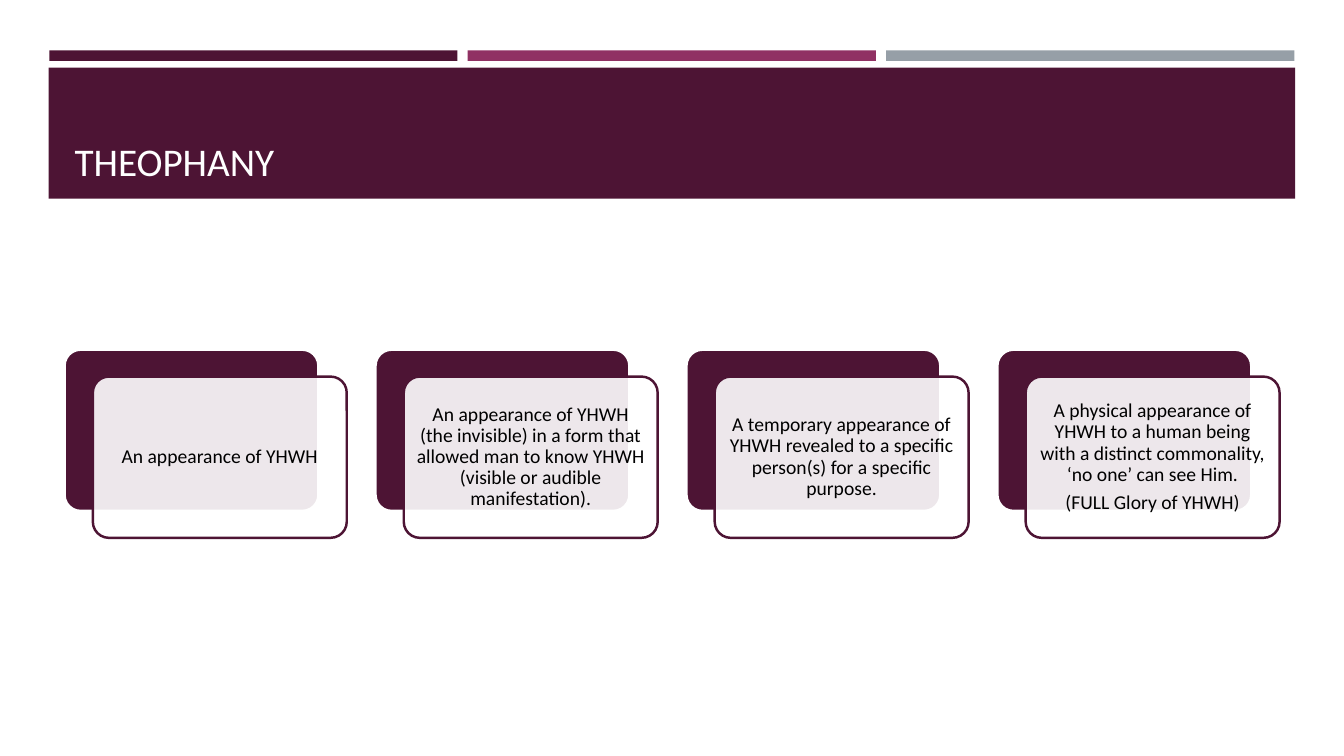
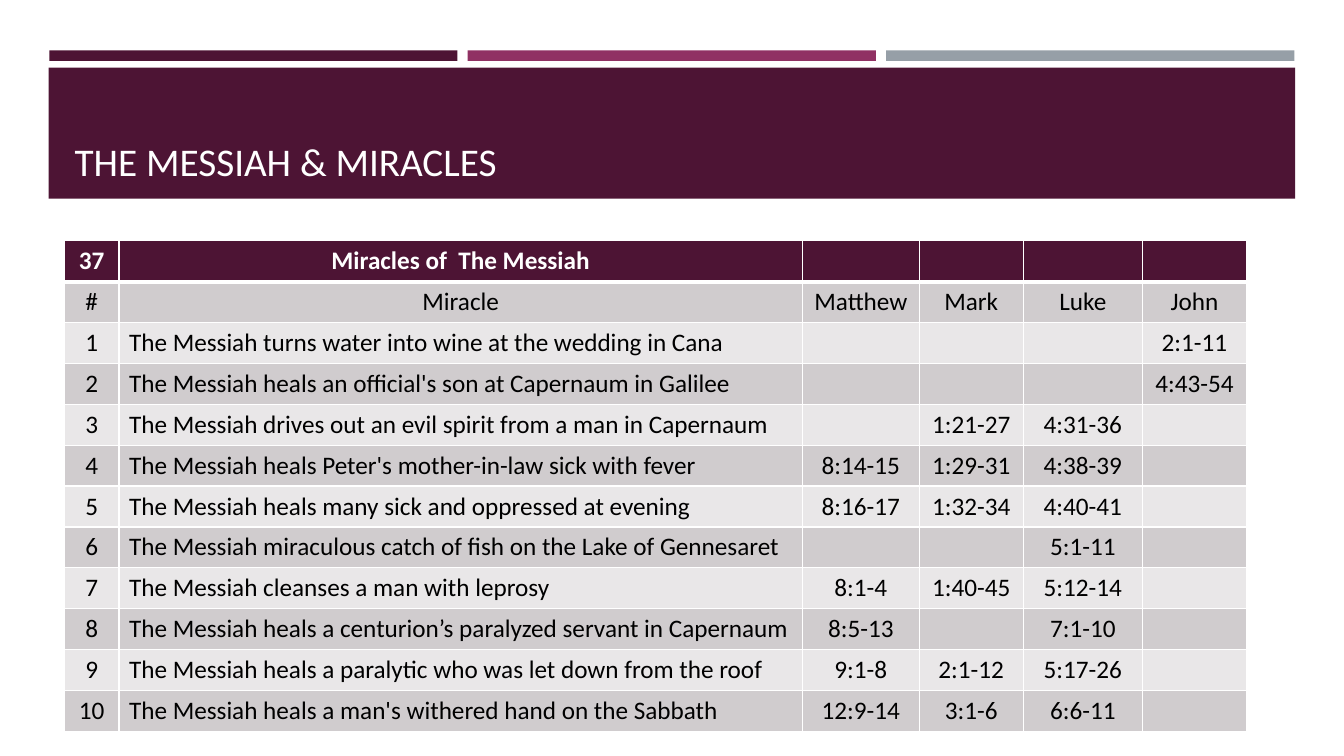
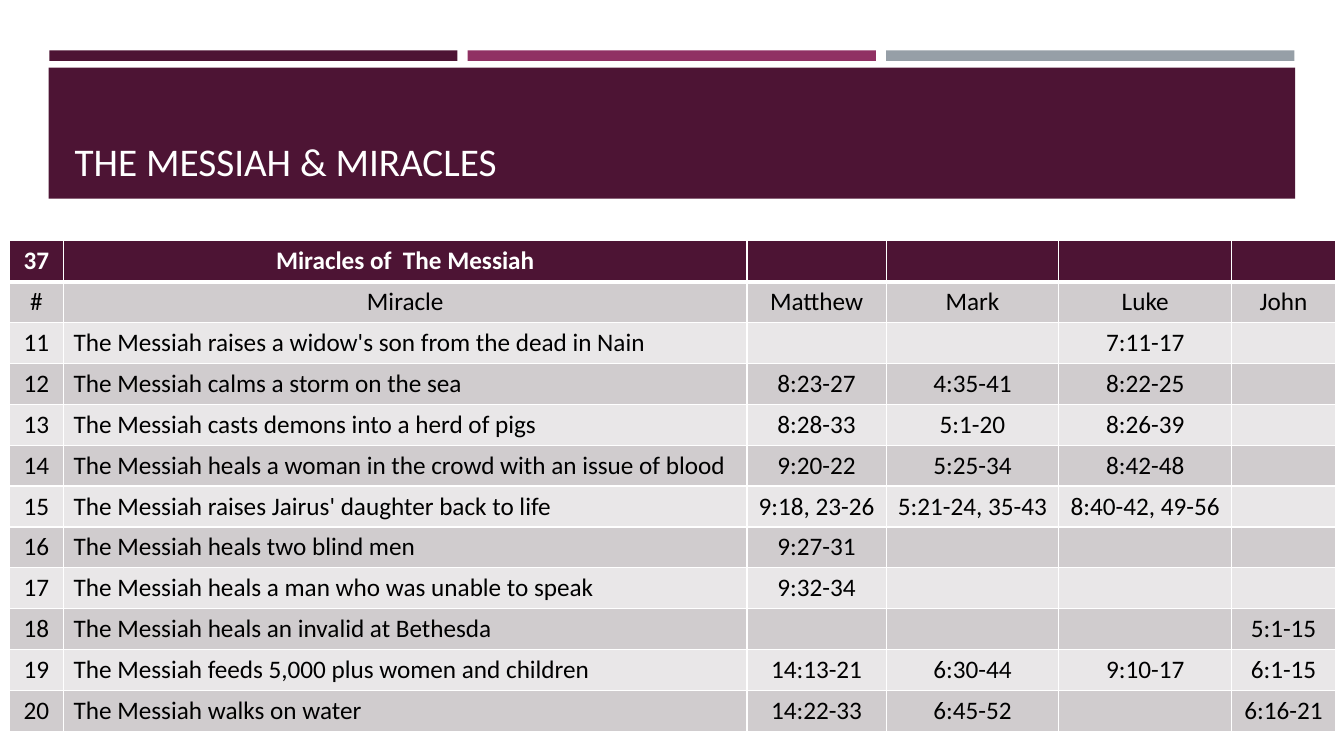
from lxml import etree
from pptx import Presentation
from pptx.dml.color import RGBColor
from pptx.enum.shapes import MSO_SHAPE
from pptx.enum.text import MSO_ANCHOR, PP_ALIGN
from pptx.oxml.ns import qn
from pptx.util import Pt

PLUM = RGBColor(0x4D, 0x14, 0x34)
MAGENTA = RGBColor(0x90, 0x31, 0x63)
GREY = RGBColor(0x96, 0x9F, 0xA7)
ROW_DARK = RGBColor(0xD0, 0xCC, 0xCE)
ROW_LIGHT = RGBColor(0xE9, 0xE7, 0xE8)
WHITE = RGBColor(0xFF, 0xFF, 0xFF)
BLACK = RGBColor(0, 0, 0)

FONT = "Calibri"
RECT, ROUNDED = MSO_SHAPE.RECTANGLE, MSO_SHAPE.ROUNDED_RECTANGLE
LEFT, CENTER = PP_ALIGN.LEFT, PP_ALIGN.CENTER
MIDDLE, BOTTOM = MSO_ANCHOR.MIDDLE, MSO_ANCHOR.BOTTOM

CONTENT_LEFT = 46.1
ROW_HEIGHT = 29.22
GOSPELS = ("Matthew", "Mark", "Luke", "John")

DEFINITIONS = (
    "An appearance of YHWH",
    "An appearance of YHWH (the invisible) in a form that allowed man to know "
    "YHWH (visible or audible manifestation).",
    "A temporary appearance of YHWH revealed to a specific person(s) for a "
    "specific purpose.",
    "A physical appearance of YHWH to a human being with a distinct commonality, "
    "‘no one’ can see Him.\n(FULL Glory of YHWH)",
)

MIRACLES_1_TO_10 = (
    ("The Messiah turns water into wine at the wedding in Cana", "", "", "", "2:1-11"),
    ("The Messiah heals an official's son at Capernaum in Galilee", "", "", "", "4:43-54"),
    ("The Messiah drives out an evil spirit from a man in Capernaum",
     "", "1:21-27", "4:31-36", ""),
    ("The Messiah heals Peter's mother-in-law sick with fever",
     "8:14-15", "1:29-31", "4:38-39", ""),
    ("The Messiah heals many sick and oppressed at evening",
     "8:16-17", "1:32-34", "4:40-41", ""),
    ("The Messiah miraculous catch of fish on the Lake of Gennesaret", "", "", "5:1-11", ""),
    ("The Messiah cleanses a man with leprosy", "8:1-4", "1:40-45", "5:12-14", ""),
    ("The Messiah heals a centurion’s paralyzed servant in Capernaum",
     "8:5-13", "", "7:1-10", ""),
    ("The Messiah heals a paralytic who was let down from the roof",
     "9:1-8", "2:1-12", "5:17-26", ""),
    ("The Messiah heals a man's withered hand on the Sabbath",
     "12:9-14", "3:1-6", "6:6-11", ""),
)

MIRACLES_11_TO_20 = (
    ("The Messiah raises a widow's son from the dead in Nain", "", "", "7:11-17", ""),
    ("The Messiah calms a storm on the sea", "8:23-27", "4:35-41", "8:22-25", ""),
    ("The Messiah casts demons into a herd of pigs", "8:28-33", "5:1-20", "8:26-39", ""),
    ("The Messiah heals a woman in the crowd with an issue of blood",
     "9:20-22", "5:25-34", "8:42-48", ""),
    ("The Messiah raises Jairus' daughter back to life",
     "9:18, 23-26", "5:21-24, 35-43", "8:40-42, 49-56", ""),
    ("The Messiah heals two blind men", "9:27-31", "", "", ""),
    ("The Messiah heals a man who was unable to speak", "9:32-34", "", "", ""),
    ("The Messiah heals an invalid at Bethesda", "", "", "", "5:1-15"),
    ("The Messiah feeds 5,000 plus women and children",
     "14:13-21", "6:30-44", "9:10-17", "6:1-15"),
    ("The Messiah walks on water", "14:22-33", "6:45-52", "", "6:16-21"),
)


def style_paragraph(paragraph, size, color, align, bold=False):
    paragraph.alignment = align
    for font in (paragraph.font, *(run.font for run in paragraph.runs)):
        font.name, font.size, font.bold = FONT, Pt(size), bold
        font.color.rgb = color


def add_block(slide, kind, left, top, width, height, fill, line=None):
    block = slide.shapes.add_shape(kind, Pt(left), Pt(top), Pt(width), Pt(height))
    block.shadow.inherit = False
    block.fill.solid()
    block.fill.fore_color.rgb = fill
    if line is None:
        block.line.fill.background()
    else:
        block.line.color.rgb = line
        block.line.width = Pt(1.75)
    return block


def move_bands_to_layout(slide):
    """Draw the shared bands and hand them to the slide's layout."""
    layout = slide.slide_layout
    for footer in [p for p in layout.placeholders if p.placeholder_format.idx]:
        layout.shapes.element.remove(footer.element)
    bands = [add_block(slide, RECT, 35.2 + 298.9 * i, 36, 291.6, 7.5, color)
             for i, color in enumerate((PLUM, MAGENTA, GREY))]
    bands.append(add_block(slide, RECT, 34.8, 48.4, 890.4, 93.6, PLUM))
    for band in bands:
        layout.shapes.element.append(band.element)


def add_titled_slide(prs, heading):
    slide = prs.slides.add_slide(prs.slide_layouts[5])
    title = slide.shapes.title
    title.left, title.top = Pt(CONTENT_LEFT), Pt(55.4)
    title.width, title.height = Pt(868.3), Pt(79.9)
    title.text_frame.text = heading
    title.text_frame.vertical_anchor = BOTTOM
    style_paragraph(title.text_frame.paragraphs[0], 28, WHITE, LEFT)
    return slide


def add_definition_card(slide, left, definition):
    """A plum card with a translucent text card shifted over it."""
    top, width, height = 249.8, 181.4, 115.2
    back = add_block(slide, ROUNDED, left, top, width, height, PLUM, WHITE)
    front = add_block(slide, ROUNDED, left + 20.2, top + 19.2, width, height, WHITE, PLUM)
    for card in (back, front):
        card.adjustments[0] = 0.1
    fill_color = front.element.spPr.find(qn("a:solidFill"))[0]
    etree.SubElement(fill_color, qn("a:alpha"), val="90000")

    frame = front.text_frame
    frame.text = definition
    frame.word_wrap = True
    frame.vertical_anchor = MIDDLE
    frame.margin_left = frame.margin_right = Pt(4.2)
    frame.margin_top = frame.margin_bottom = Pt(4.2)
    for paragraph in frame.paragraphs:
        style_paragraph(paragraph, 14, BLACK, CENTER)
        paragraph.line_spacing = 0.9
        paragraph.space_after = Pt(4.9)


def set_borders(cell, top, bottom):
    """White cell borders; the widths of top and bottom are in points."""
    properties = cell._tc.get_or_add_tcPr()
    widths = {"a:lnL": 1, "a:lnR": 1, "a:lnT": top, "a:lnB": bottom}
    for position, (tag, width) in enumerate(widths.items()):
        border = etree.Element(qn(tag), w=str(Pt(width)))
        fill = etree.SubElement(border, qn("a:solidFill"))
        etree.SubElement(fill, qn("a:srgbClr"), val=str(WHITE))
        properties.insert(position, border)


def add_miracle_table(slide, left, column_widths, first_number, miracles):
    rows = [("37", "Miracles of  The Messiah", "", "", "", ""),
            ("#", "Miracle", *GOSPELS)]
    rows += [(str(number), *miracle)
             for number, miracle in enumerate(miracles, first_number)]
    table = slide.shapes.add_table(
        len(rows), len(column_widths), Pt(left), Pt(172),
        Pt(sum(column_widths)), Pt(ROW_HEIGHT * len(rows))).table
    for column, width in zip(table.columns, column_widths):
        column.width = Pt(width)
    for r, row in enumerate(rows):
        table.rows[r].height = Pt(ROW_HEIGHT)
        header = r == 0
        fill = PLUM if header else ROW_DARK if r % 2 else ROW_LIGHT
        for c, entry in enumerate(row):
            cell = table.cell(r, c)
            cell.text_frame.text = entry
            cell.fill.solid()
            cell.fill.fore_color.rgb = fill
            set_borders(cell, top=3 if r == 1 else 1, bottom=3 if header else 1)
            style_paragraph(cell.text_frame.paragraphs[0], 18,
                            WHITE if header else BLACK,
                            LEFT if c == 1 and r > 1 else CENTER, header)


def main():
    prs = Presentation()
    prs.slide_width, prs.slide_height = Pt(960), Pt(540)

    theophany = add_titled_slide(prs, "THEOPHANY")
    move_bands_to_layout(theophany)
    for i, definition in enumerate(DEFINITIONS):
        add_definition_card(theophany, CONTENT_LEFT + 222.1 * i, definition)

    miracles = "THE MESSIAH & MIRACLES"
    add_miracle_table(add_titled_slide(prs, miracles), CONTENT_LEFT,
                      (38.9, 488.2, 83.5, 74.2, 85.3, 74.2), 1, MIRACLES_1_TO_10)
    add_miracle_table(add_titled_slide(prs, miracles), 6.5,
                      (38.9, 488.2, 99.4, 123.4, 123.4, 74.2), 11, MIRACLES_11_TO_20)

    prs.save("out.pptx")


if __name__ == "__main__":
    main()
